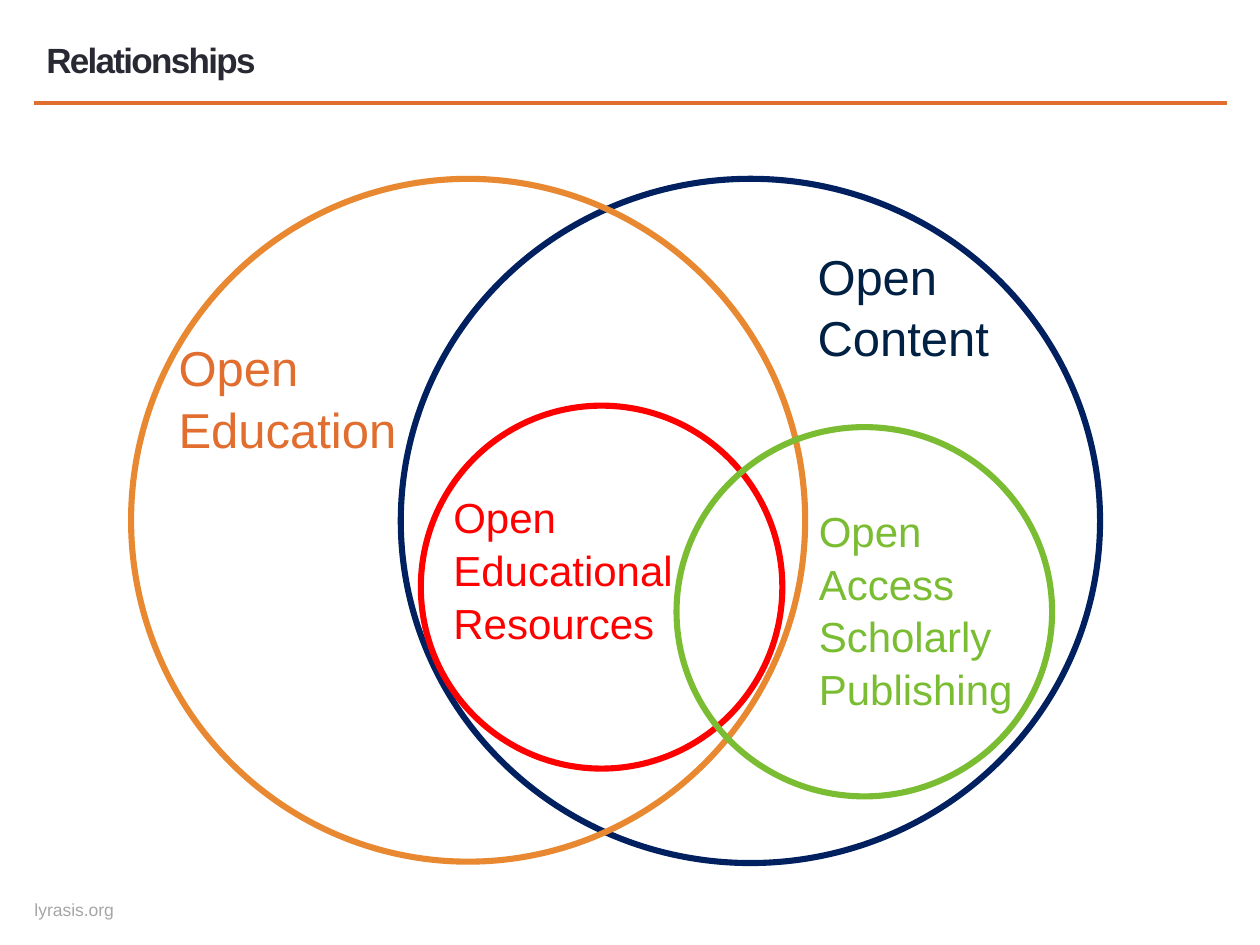
from lxml.etree import SubElement
from pptx import Presentation
from pptx.dml.color import RGBColor
from pptx.enum.shapes import MSO_CONNECTOR as CONNECTOR, MSO_SHAPE as SHAPE
from pptx.enum.text import MSO_ANCHOR as ANCHOR, PP_ALIGN as ALIGN
from pptx.oxml.ns import qn
from pptx.util import Pt

FONT = "Arial"
COLORS = {
    "rule": "E16D2E",
    "title": "292934",
    "footer": "A6A6A6",
    "white": "FFFFFF",
    "content_ring": "002060",
    "content_text": "002144",
    "education_ring": "E88831",
    "education_text": "E16D2E",
    "resources": "FF0000",
    "publishing": "7ABC32",
}


def color(name):
    return RGBColor.from_string(COLORS[name])


def add_rule(slide, left, right, y):
    rule = slide.shapes.add_connector(CONNECTOR.STRAIGHT, Pt(left), Pt(y), Pt(right), Pt(y))
    rule.line.color.rgb = color("rule")
    rule.line.width = Pt(2.08)
    SubElement(rule._element.spPr, qn("a:effectLst"))


def add_circle(slide, box, ring, fill=None):
    circle = slide.shapes.add_shape(SHAPE.OVAL, *map(Pt, box))
    circle.shadow.inherit = False
    if fill:
        circle.fill.solid()
        circle.fill.fore_color.rgb = color(fill)
    else:
        circle.fill.background()
    circle.line.color.rgb = color(ring)
    circle.line.width = Pt(3.5)


def add_text(slide, box, paragraphs, size, ink, spacing=1.05, bold=False):
    shape = slide.shapes.add_textbox(*map(Pt, box))
    frame = shape.text_frame
    frame.word_wrap = True
    for index, text in enumerate(paragraphs):
        paragraph = frame.paragraphs[0] if index == 0 else frame.add_paragraph()
        paragraph.line_spacing = spacing
        run = paragraph.add_run()
        run.text = text
        run.font.name = FONT
        run.font.size = Pt(size)
        run.font.bold = bold
        run.font.color.rgb = color(ink)
    return frame


def add_title(slide, text):
    frame = add_text(slide, (19.4, 17.3, 527, 36), [text], 20, "title", 0.9, True)
    frame.vertical_anchor = ANCHOR.MIDDLE
    frame.paragraphs[0].runs[0].font._element.set("spc", "-100")


def add_footer(slide, text):
    frame = add_text(slide, (19.4, 513.4, 46, 12.2), [text], 10, "footer", 1.0)
    frame.margin_left = frame.margin_right = frame.margin_top = frame.margin_bottom = 0
    frame.word_wrap = False
    frame.vertical_anchor = ANCHOR.MIDDLE
    frame.paragraphs[0].alignment = ALIGN.CENTER


def main():
    presentation = Presentation()
    presentation.slide_width, presentation.slide_height = Pt(720), Pt(540)
    slide = presentation.slides.add_slide(presentation.slide_layouts[6])

    add_rule(slide, 19.4, 701.3, 59)
    add_footer(slide, "lyrasis.org")
    add_title(slide, "Relationships")

    add_circle(slide, (229, 102.2, 399.6, 391), "content_ring", "white")
    add_circle(slide, (74.9, 102.2, 385.2, 390.2), "education_ring")
    add_circle(slide, (240.5, 231.8, 206.6, 207.4), "resources")
    add_circle(slide, (386.6, 244.1, 214.6, 211), "publishing")

    add_text(slide, (460.1, 135.4, 127.4, 74.9), ["Open Content"], 28, "content_text")
    add_text(slide, (95, 187.9, 164.2, 74.9), ["Open Education"], 28, "education_text")
    add_text(slide, (252, 275.8, 177.1, 94.3), ["Open Educational Resources"], 24, "resources")
    add_text(slide, (460.8, 283.7, 145.4, 123.8),
             ["Open", "Access Scholarly Publishing"], 24, "publishing")

    presentation.save("out.pptx")


if __name__ == "__main__":
    main()
